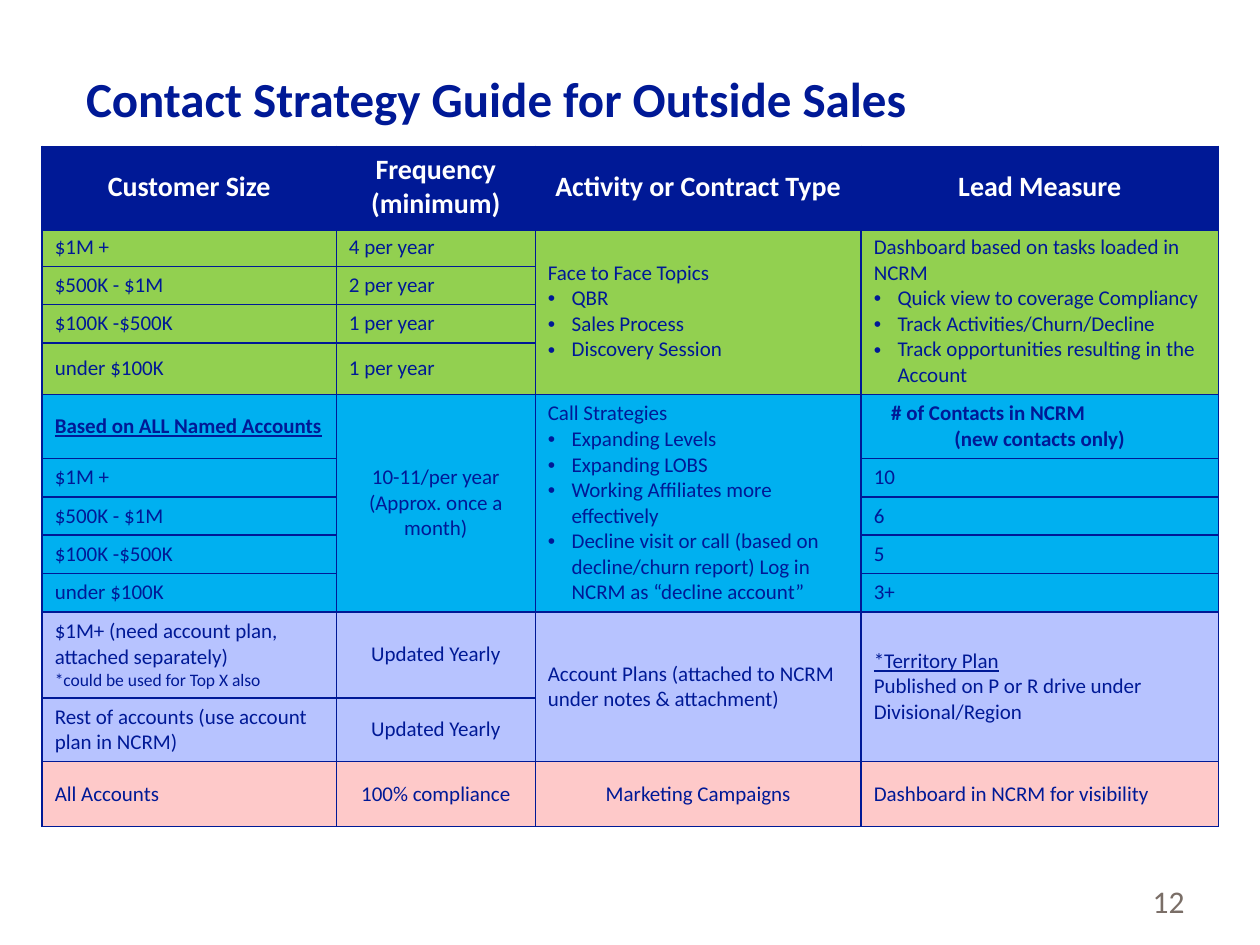
from dataclasses import dataclass

import pptx
import pptx.dml.color
import pptx.enum.text
import pptx.oxml
import pptx.oxml.ns
import pptx.util
from pptx.util import Cm

ALIGN = pptx.enum.text.PP_ALIGN
MIDDLE = pptx.enum.text.MSO_ANCHOR.MIDDLE
NAVY, WHITE, GREY = "001996", "FFFFFF", "7A6E67"
GREEN, BLUE, LILAC, PINK = "92D050", "00B0F0", "B7C3FF", "FEC9C9"

COLUMN_WIDTHS = [5.93, 4.01, 6.57, 7.2]
ROW_HEIGHTS = [1.65, 0.76, 0.77, 0.77, 1.04, 1.29, 0.77,
               0.77, 0.78, 0.77, 1.73, 1.27, 1.31]


@dataclass
class Line:
    text: str
    size: float = 12
    color: str = NAVY
    bold: bool = False
    underline: bool = False
    align: ALIGN = ALIGN.LEFT
    bullet: bool = False
    indent: float = 0


@dataclass
class Entry:
    row: int
    column: int
    fill: str
    lines: list[Line]
    row_span: int = 1


def rgb(color: str) -> pptx.dml.color.RGBColor:
    return pptx.dml.color.RGBColor.from_string(color)


def centered(text: str) -> Line:
    return Line(text, align=ALIGN.CENTER)


def heading(text: str) -> Line:
    return Line(text, 16, WHITE, bold=True, align=ALIGN.CENTER)


def bulleted(intro: str, *points: str) -> list[Line]:
    return [Line(intro)] + [Line(point, bullet=True) for point in points]


def set_indent(paragraph, line: Line) -> None:
    properties = paragraph._p.get_or_add_pPr()
    if line.bullet:
        properties.set("marL", str(Cm(0.48)))
        properties.set("indent", str(-Cm(0.48)))
        ns = pptx.oxml.ns.nsdecls("a")
        for xml in (f'<a:buClr {ns}><a:srgbClr val="{NAVY}"/></a:buClr>',
                    f'<a:buFont {ns} typeface="Arial"/>',
                    f'<a:buChar {ns} char="•"/>'):
            properties.append(pptx.oxml.parse_xml(xml))
    elif line.indent:
        properties.set("marL", str(Cm(line.indent)))


def write_lines(frame, lines: list[Line]) -> None:
    for index, line in enumerate(lines):
        paragraph = frame.add_paragraph() if index else frame.paragraphs[0]
        set_indent(paragraph, line)
        paragraph.alignment = line.align
        run = paragraph.add_run()
        run.text = line.text
        formats = {"name": "Calibri", "size": pptx.util.Pt(line.size),
                   "bold": line.bold, "underline": line.underline}
        for attribute, value in formats.items():
            setattr(run.font, attribute, value)
        run.font.color.rgb = rgb(line.color)


def style_cell(cell, fill: str, bottom_width: float = 1) -> None:
    """Draw the borders first: the schema wants them ahead of the fill."""
    properties = cell._tc.get_or_add_tcPr()
    for side in "LRTB":
        width = pptx.util.Pt(bottom_width if side == "B" else 1)
        properties.append(pptx.oxml.parse_xml(
            f'<a:ln{side} {pptx.oxml.ns.nsdecls("a")} w="{width}"><a:solidFill>'
            f'<a:srgbClr val="{NAVY}"/></a:solidFill></a:ln{side}>'))
    cell.fill.solid()
    cell.fill.fore_color.rgb = rgb(fill)
    cell.vertical_anchor = MIDDLE


def fill_entry(table, entry: Entry) -> None:
    first = table.cell(entry.row, entry.column)
    last_row = entry.row + entry.row_span - 1
    for row in range(entry.row, last_row + 1):
        style_cell(table.cell(row, entry.column), entry.fill, 1 if row else 3)
    if entry.row_span > 1:
        first.merge(table.cell(last_row, entry.column))
    write_lines(first.text_frame, entry.lines)


def column_entries(row: int, column: int, fill: str, lines: list[Line]) -> list[Entry]:
    """One single-line entry per row, going down from the given row."""
    return [Entry(row + step, column, fill, [line]) for step, line in enumerate(lines)]


def strategy_entries() -> list[Entry]:
    sizes = [Line(text) for text in ("$1M +", "$500K - $1M", "$100K -$500K", "under $100K")]
    headings = [["Customer Size"], ["Frequency", "(minimum)"],
                ["Activity or Contract Type"], ["Lead Measure"]]
    header = [Entry(0, column, NAVY, [heading(text) for text in texts])
              for column, texts in enumerate(headings)]
    face_to_face = [
        *column_entries(1, 0, GREEN, sizes),
        *column_entries(1, 1, GREEN, [Line(f"{count} per year") for count in (4, 2, 1, 1)]),
        Entry(1, 2, GREEN, bulleted("Face to Face Topics", "QBR", "Sales Process",
                                    "Discovery Session"), 4),
        Entry(1, 3, GREEN, bulleted("Dashboard based on tasks loaded in NCRM",
                                    "Quick view to coverage Compliancy",
                                    "Track Activities/Churn/Decline",
                                    "Track opportunities resulting in the Account"), 4),
    ]
    calls = [
        Entry(5, 0, BLUE, [Line("Based on ALL Named Accounts", bold=True, underline=True)]),
        *column_entries(6, 0, BLUE, sizes),
        Entry(5, 1, BLUE, [centered("10-11/per year"), centered("(Approx. once a month)")], 5),
        Entry(5, 2, BLUE, bulleted("Call Strategies", "Expanding Levels", "Expanding LOBS",
                                   "Working Affiliates more effectively",
                                   "Decline visit or call (based on decline/churn report) "
                                   "Log in NCRM as “decline account”"), 5),
        Entry(5, 3, BLUE, [Line("# of Contacts in NCRM", bold=True, indent=0.35),
                           Line("(new contacts only)", bold=True, align=ALIGN.CENTER)]),
        *column_entries(6, 3, BLUE, [Line(count) for count in ("10", "6", "5", "3+")]),
    ]
    plans = [
        Entry(10, 0, LILAC, [Line("$1M+ (need account plan, attached separately)"),
                             Line("*could be used for Top X also", 10)]),
        Entry(11, 0, LILAC, [Line("Rest of accounts (use account plan in NCRM)")]),
        *column_entries(10, 1, LILAC, [centered("Updated Yearly")] * 2),
        Entry(10, 2, LILAC, [Line("Account Plans (attached to NCRM under notes & attachment)")], 2),
        Entry(10, 3, LILAC, [Line("*Territory Plan", underline=True),
                             Line("Published on P or R drive under Divisional/Region")], 2),
    ]
    campaigns = [Entry(12, column, PINK, [line]) for column, line in enumerate([
        Line("All Accounts"), centered("100% compliance"),
        centered("Marketing Campaigns"), Line("Dashboard in NCRM for visibility")])]
    return header + face_to_face + calls + plans + campaigns


def add_strategy_table(slide) -> None:
    table = slide.shapes.add_table(
        len(ROW_HEIGHTS), len(COLUMN_WIDTHS), Cm(0.85), Cm(2.95),
        Cm(sum(COLUMN_WIDTHS)), Cm(sum(ROW_HEIGHTS))).table
    for column, width in zip(table.columns, COLUMN_WIDTHS):
        column.width = Cm(width)
    for row, height in zip(table.rows, ROW_HEIGHTS):
        row.height = Cm(height)
    for entry in strategy_entries():
        fill_entry(table, entry)


def main() -> None:
    deck = pptx.Presentation()
    deck.slide_width, deck.slide_height = Cm(25.4), Cm(19.05)
    slide = deck.slides.add_slide(deck.slide_layouts.get_by_name("Title Only"))
    add_strategy_table(slide)

    title = slide.shapes.title
    title.left, title.top, title.width, title.height = Cm(1.48), Cm(0.76), Cm(22.86), Cm(2.41)
    title.text_frame.vertical_anchor = MIDDLE
    write_lines(title.text_frame,
                [Line("Contact Strategy Guide for Outside Sales", 28, bold=True)])

    page_number = slide.shapes.add_textbox(Cm(18.21), Cm(17.65), Cm(5.92), Cm(1.02)).text_frame
    page_number.word_wrap = True
    page_number.vertical_anchor = MIDDLE
    write_lines(page_number, [Line("12", 18, GREY, align=ALIGN.RIGHT)])
    deck.save("out.pptx")


if __name__ == "__main__":
    main()
